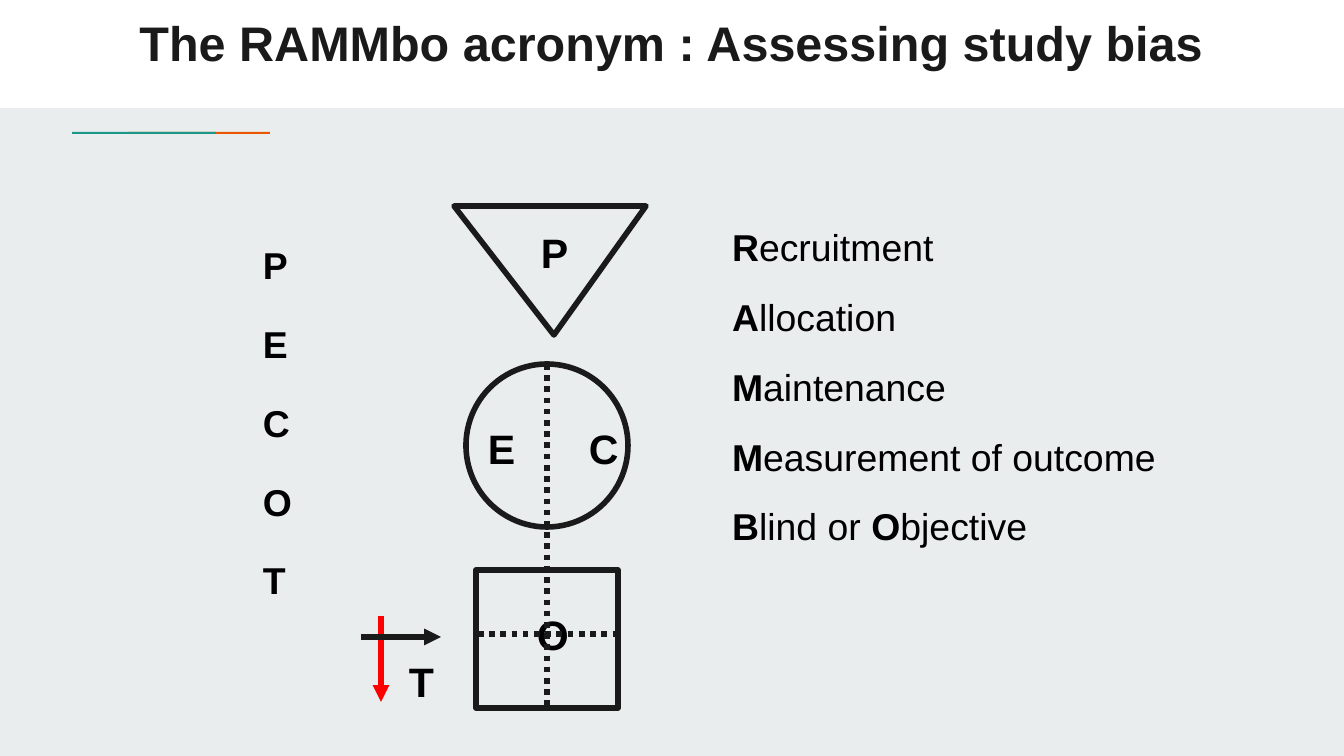
from lxml import etree
from pptx import Presentation
from pptx.dml.color import RGBColor
from pptx.enum.dml import MSO_LINE
from pptx.enum.shapes import MSO_CONNECTOR, MSO_SHAPE
from pptx.enum.text import MSO_ANCHOR, PP_ALIGN
from pptx.oxml.ns import qn
from pptx.util import Emu, Pt

TOP, MIDDLE = MSO_ANCHOR.TOP, MSO_ANCHOR.MIDDLE
LEFT, CENTER = PP_ALIGN.LEFT, PP_ALIGN.CENTER
RECT, OVAL = MSO_SHAPE.RECTANGLE, MSO_SHAPE.OVAL
TRIANGLE = MSO_SHAPE.ISOSCELES_TRIANGLE
STRAIGHT = MSO_CONNECTOR.STRAIGHT
DOTTED = MSO_LINE.ROUND_DOT
EMU_PER_PX = 914400 / 134.4
INK, BLACK, WHITE, RED = "1A1A1A", "000000", "FFFFFF", "FF0000"
ORANGE, TEAL, PALE = "EB5600", "1A9988", "E9EDEE"

BARS = [
    ((0, 0, 1344, 108), WHITE),
    ((128, 132, 142, 2), ORANGE),
    ((72, 132, 144, 2), TEAL),
]
LETTERS = [("P", 531, 215), ("E", 478, 411), ("C", 579, 411),
           ("O", 527, 597), ("T", 399, 644)]
PECOT = [[(letter, True)] for letter in "PECOT"]
RAMMBO = [
    [("R", True), ("ecruitment", False)],
    [("A", True), ("llocation", False)],
    [("M", True), ("aintenance", False)],
    [("M", True), ("easurement of outcome", False)],
    [("B", True), ("lind or ", False), ("O", True), ("bjective", False)],
]


def px(*values):
    """Turn pixel lengths into EMU."""
    return [Emu(round(v * EMU_PER_PX)) for v in values]


def rgb(value):
    """Turn a hex string into a colour."""
    return RGBColor.from_string(value)


def add_bar(s, box, color):
    """Add a filled rectangle without an outline."""
    sp = s.shapes.add_shape(RECT, *px(*box))
    sp.shadow.inherit = False
    sp.fill.solid()
    sp.fill.fore_color.rgb = rgb(color)
    sp.line.fill.background()


def add_outline(s, kind, box):
    """Add an unfilled shape with a thick outline."""
    sp = s.shapes.add_shape(kind, *px(*box))
    sp.shadow.inherit = False
    sp.fill.background()
    sp.line.color.rgb = rgb(INK)
    sp.line.width = Pt(3)
    return sp


def add_line(s, start, end, color=INK, dash=None, arrow=False):
    """Add a straight line, dotted or with an arrowhead if asked."""
    line = s.shapes.add_connector(STRAIGHT, *px(*start, *end))
    line.line.color.rgb = rgb(color)
    line.line.width = Pt(3)
    if dash:
        line.line.dash_style = dash
    if arrow:
        ln = line.line._get_or_add_ln()
        etree.SubElement(ln, qn("a:tailEnd"), type="triangle")
    etree.SubElement(line._element.spPr, qn("a:effectLst"))
    return line


def add_text(s, box, paragraphs, size, color=BLACK, anchor=TOP,
             inset=(10, 5), **paragraph_format):
    """Add a text box from paragraphs of (text, bold) runs."""
    tf = s.shapes.add_textbox(*px(*box)).text_frame
    side, edge = px(*inset)
    frame_format = {"word_wrap": True, "vertical_anchor": anchor,
                    "margin_left": side, "margin_right": side,
                    "margin_top": edge, "margin_bottom": edge}
    for name, value in frame_format.items():
        setattr(tf, name, value)
    for i, runs in enumerate(paragraphs):
        p = tf.add_paragraph() if i else tf.paragraphs[0]
        for name, value in paragraph_format.items():
            setattr(p, name, value)
        for text, bold in runs:
            r = p.add_run()
            r.text = text
            font_format = {"name": "Arial", "size": Pt(size), "bold": bold}
            for name, value in font_format.items():
                setattr(r.font, name, value)
            r.font.color.rgb = rgb(color)


def add_diagram(s):
    """Add the triangle, circle, square and time arrows."""
    add_line(s, (381, 616), (381, 702), RED, arrow=True)
    circle = add_outline(s, OVAL, (466, 364, 162, 163))
    square = add_outline(s, RECT, (476, 570, 142, 138))
    divider = add_line(s, (547, 364), (547, 708), dash=DOTTED)
    divider.begin_connect(circle, 0)
    divider.end_connect(square, 2)
    population = add_outline(s, TRIANGLE, (454, 206, 192, 129))
    population.rotation = 180
    population.adjustments[0] = 0.48
    add_line(s, (478, 634), (618, 634), dash=DOTTED)
    add_line(s, (361, 637), (441, 637), arrow=True)


def main():
    """Build the slide and save it."""
    prs = Presentation()
    prs.slide_width, prs.slide_height = px(1344, 756)
    s = prs.slides.add_slide(prs.slide_layouts[6])
    s.background.fill.solid()
    s.background.fill.fore_color.rgb = rgb(PALE)
    for box, color in BARS:
        add_bar(s, box, color)
    title = [[("The RAMMbo acronym : Assessing study bias", True)]]
    add_text(s, (107, 0, 1130, 121), title, 26, INK, inset=(13, 13),
             alignment=CENTER)
    for letter, x, y in LETTERS:
        add_text(s, (x, y, 51, 75), [[(letter, True)]], 22, anchor=MIDDLE,
                 alignment=LEFT)
    add_diagram(s)
    add_text(s, (253, 224, 74, 388), PECOT, 20, alignment=LEFT,
             line_spacing=1.3, space_before=Pt(11))
    add_text(s, (722, 215, 515, 345), RAMMBO, 20, alignment=LEFT,
             line_spacing=1.1, space_before=Pt(11))
    prs.save("out.pptx")


if __name__ == "__main__":
    main()
